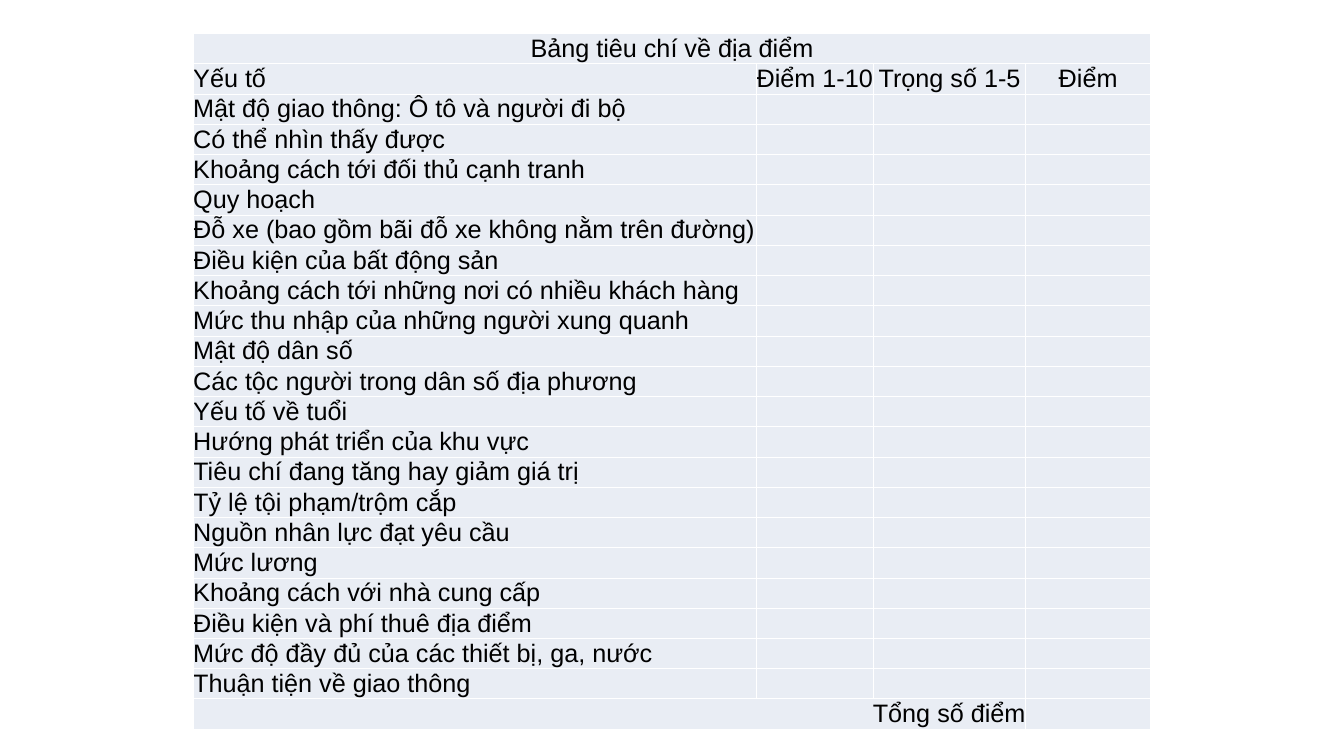
"""Build a slide with a scoring table of location criteria."""
from lxml import etree
from pptx import Presentation
from pptx.dml.color import RGBColor
from pptx.enum.text import MSO_ANCHOR, PP_ALIGN
from pptx.oxml.ns import qn
from pptx.util import Pt

LEFT, CENTER, RIGHT = PP_ALIGN.LEFT, PP_ALIGN.CENTER, PP_ALIGN.RIGHT
MIDDLE = MSO_ANCHOR.MIDDLE
BLACK = RGBColor(0x00, 0x00, 0x00)
WHITE = RGBColor(0xFF, 0xFF, 0xFF)
PALE_BLUE = RGBColor(0xE9, 0xED, 0xF4)

EMU_PER_PX = 9525
BLANK_LAYOUT = 6
COLUMN_WIDTHS = [804, 168, 217, 179]
TITLE = "Bảng tiêu chí về địa điểm"
HEADINGS = ["Yếu tố", "Điểm 1-10", "Trọng số 1-5", "Điểm"]
CRITERIA = [
    "Mật độ giao thông: Ô tô và người đi bộ",
    "Có thể nhìn thấy được",
    "Khoảng cách tới đối thủ cạnh tranh",
    "Quy hoạch",
    "Đỗ xe (bao gồm bãi đỗ xe không nằm trên đường)",
    "Điều kiện của bất động sản",
    "Khoảng cách tới những nơi có nhiều khách hàng",
    "Mức thu nhập của những người xung quanh",
    "Mật độ dân số",
    "Các tộc người trong dân số địa phương",
    "Yếu tố về tuổi",
    "Hướng phát triển của khu vực",
    "Tiêu chí đang tăng hay giảm giá trị",
    "Tỷ lệ tội phạm/trộm cắp",
    "Nguồn nhân lực đạt yêu cầu",
    "Mức lương",
    "Khoảng cách với nhà cung cấp",
    "Điều kiện và phí thuê địa điểm",
    "Mức độ đầy đủ của các thiết bị, ga, nước",
    "Thuận tiện về giao thông",
]
TOTAL = "Tổng số điểm"


def px(length):
    return length * EMU_PER_PX


class SlideBuilder:
    """Hold the table style and the current slide."""

    font_format = {"name": "Arial", "size": Pt(27), "bold": False}
    cell_format = {
        "margin_left": 0, "margin_top": 0, "margin_right": 0, "margin_bottom": 0,
        "vertical_anchor": MIDDLE,
    }
    border_width = Pt(1)

    def __init__(self, slide):
        self.slide = slide

    def add_table(self, left, top, height, column_widths, row_count):
        frame = self.slide.shapes.add_table(
            row_count, len(column_widths),
            px(left), px(top), px(sum(column_widths)), px(height))
        table = frame.table
        table.first_row = table.horz_banding = False
        for column, width in zip(table.columns, column_widths):
            column.width = px(width)
        for cell in table.iter_cells():
            self.style_cell(cell)
        return table

    def style_cell(self, cell):
        for name, value in self.cell_format.items():
            setattr(cell, name, value)
        properties = cell._tc.get_or_add_tcPr()
        for side in ("a:lnL", "a:lnR", "a:lnT", "a:lnB"):
            line = etree.SubElement(properties, qn(side), w=str(self.border_width))
            fill = etree.SubElement(line, qn("a:solidFill"))
            etree.SubElement(fill, qn("a:srgbClr"), val=str(WHITE))
        cell.fill.solid()
        cell.fill.fore_color.rgb = PALE_BLUE

    def write_cell(self, cell, text, alignment=LEFT):
        paragraph = cell.text_frame.paragraphs[0]
        paragraph.alignment = alignment
        run = paragraph.add_run()
        run.text = text
        for name, value in self.font_format.items():
            setattr(run.font, name, value)
        run.font.color.rgb = BLACK


def main():
    presentation = Presentation()
    presentation.slide_width, presentation.slide_height = px(1920), px(1080)
    slide = presentation.slides.add_slide(presentation.slide_layouts[BLANK_LAYOUT])
    builder = SlideBuilder(slide)

    last_row = len(CRITERIA) + 2
    table = builder.add_table(276, 48, 994, COLUMN_WIDTHS, last_row + 1)
    table.cell(0, 0).merge(table.cell(0, 3))
    table.cell(last_row, 0).merge(table.cell(last_row, 2))

    builder.write_cell(table.cell(0, 0), TITLE, CENTER)
    for column, heading in enumerate(HEADINGS):
        builder.write_cell(table.cell(1, column), heading, CENTER if column else LEFT)
    for row, criterion in enumerate(CRITERIA, start=2):
        builder.write_cell(table.cell(row, 0), criterion)
    builder.write_cell(table.cell(last_row, 0), TOTAL, RIGHT)

    presentation.save("out.pptx")


if __name__ == "__main__":
    main()
